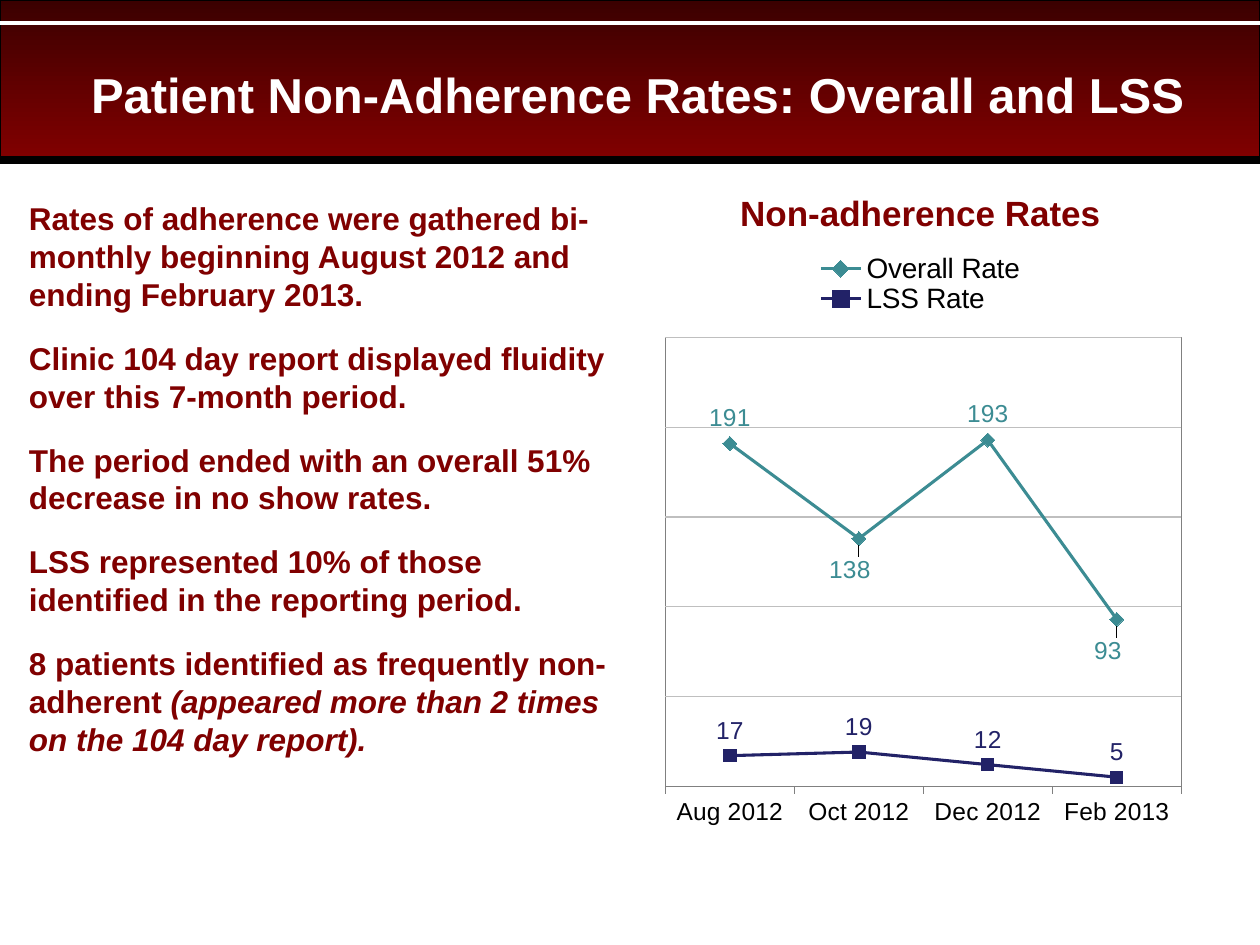
from lxml import etree
from pptx import Presentation
from pptx import util as u
from pptx.chart.data import CategoryChartData
from pptx.dml.color import RGBColor
from pptx.enum import chart as ch, shapes, text
from pptx.oxml import parse_xml
from pptx.oxml.ns import nsdecls, qn

MAROON, TEAL, NAVY, GRAY = "800000", "3C8C93", "222267", "808080"


def rgb(value):
    return RGBColor.from_string(value)


def style_font(font, size, color="000000", bold=False, italic=False):
    font.name, font.size = "Arial", u.Pt(size)
    font.bold, font.italic = bold, italic
    font.color.rgb = rgb(color)


def style_line(line, color, width):
    line.color.rgb = rgb(color)
    line.width = u.Pt(width)


def place(shape, box):
    shape.left, shape.top, shape.width, shape.height = map(u.Inches, box)


def write(paragraph, content, align=text.PP_ALIGN.LEFT, **font):
    run = paragraph.add_run()
    run.text = content
    paragraph.alignment = align
    style_font(run.font, **font)


def add_banner(slide, box):
    left, top, width, height = box
    band = slide.shapes.add_shape(shapes.MSO_SHAPE.RECTANGLE, *map(u.Inches, box))
    band.shadow.inherit = False
    band.fill.gradient()
    band.fill.gradient_angle = 270
    for stop, color in zip(band.fill.gradient_stops, ("3B0000", MAROON)):
        stop.color.rgb = rgb(color)
    style_line(band.line, "000000", 0.75)
    for offset, color, weight in ((height + 0.02, "000000", 4.5), (0.18, "FFFFFF", 2.25)):
        y = u.Inches(top + offset)
        rule = slide.shapes.add_connector(
            shapes.MSO_CONNECTOR.STRAIGHT, u.Inches(left), y, u.Inches(left + width), y)
        style_line(rule.line, color, weight)
        etree.SubElement(rule._element.spPr, qn("a:effectLst"))


def bring_to_front(shape):
    shape._element.getparent().append(shape._element)


def fill_title(title, box, content):
    place(title, box)
    bring_to_front(title)
    frame = title.text_frame
    frame.auto_size = text.MSO_AUTO_SIZE.NONE
    frame.vertical_anchor = text.MSO_ANCHOR.BOTTOM
    write(frame.paragraphs[0], content, text.PP_ALIGN.CENTER,
          size=28, color="FFFFFF", bold=True)


def fill_findings(body, box, findings):
    """Each finding is a plain part, optionally followed by an italic part."""
    place(body, box)
    bring_to_front(body)
    frame = body.text_frame
    frame.auto_size = text.MSO_AUTO_SIZE.NONE
    for index, parts in enumerate(findings):
        paragraph = frame.add_paragraph() if index else frame.paragraphs[0]
        properties = paragraph._p.get_or_add_pPr()
        properties.set("marL", "0")
        properties.set("indent", "0")
        etree.SubElement(properties, qn("a:buNone"))
        paragraph.line_spacing = 1.0
        paragraph.space_before = u.Pt(15 if index else 0)
        for position, part in enumerate(parts):
            write(paragraph, part, size=18, color=MAROON, bold=True, italic=position > 0)


def set_layout(parent, index, **values):
    """Place a chart part by fractions of the chart's size."""
    for old in parent.findall(qn("c:layout")):
        parent.remove(old)
    layout = etree.Element(qn("c:layout"))
    manual = etree.SubElement(layout, qn("c:manualLayout"))
    for key, value in values.items():
        etree.SubElement(manual, qn(f"c:{key}")).set("val", str(value))
    parent.insert(index, layout)


def hide_leader_lines(labels):
    labels._element.append(parse_xml(
        f'<c:extLst {nsdecls("c")}><c:ext uri="{{CE6537A1-D6FC-4f65-9D91-7224C49458BB}}" '
        'xmlns:c15="http://schemas.microsoft.com/office/drawing/2012/chart">'
        '<c15:showLeaderLines val="0"/></c:ext></c:extLst>'))


def style_series(series, color, marker, marker_size):
    series.smooth = False
    style_line(series.format.line, color, 1.75)
    series.marker.style, series.marker.size = marker, marker_size
    series.marker.format.fill.solid()
    series.marker.format.fill.fore_color.rgb = rgb(color)
    series.marker.format.line.color.rgb = rgb(color)
    labels = series.data_labels
    labels.show_value = True
    labels.position = ch.XL_LABEL_POSITION.ABOVE
    style_font(labels.font, 14, color)


def add_rates_chart(slide, box, months, rates):
    data = CategoryChartData()
    data.categories = months
    for name, values in rates.items():
        data.add_series(name, values)
    chart = slide.shapes.add_chart(
        ch.XL_CHART_TYPE.LINE_MARKERS, *map(u.Inches, box), data).chart
    style_font(chart.font, 10)
    chart.has_title = False

    chart.has_legend = True
    chart.legend.position = ch.XL_LEGEND_POSITION.RIGHT
    chart.legend.include_in_layout = False
    style_font(chart.legend.font, 16)
    set_layout(chart.legend._element, 1, xMode="edge", yMode="edge",
               x=0.32, y=0.04, w=0.36, h=0.1)

    month_axis, rate_axis = chart.category_axis, chart.value_axis
    month_axis.major_tick_mark = ch.XL_TICK_MARK.OUTSIDE
    style_font(month_axis.tick_labels.font, 14)
    style_line(month_axis.format.line, GRAY, 0.75)
    rate_axis.visible = False
    rate_axis.minimum_scale, rate_axis.maximum_scale, rate_axis.major_unit = 0, 250, 50
    rate_axis.has_major_gridlines = True
    style_line(rate_axis.major_gridlines.format.line, "BFBFBF", 0.75)

    plot = chart.plots[0]
    plot.vary_by_categories = False
    overall, lss = plot.series
    style_series(overall, TEAL, ch.XL_MARKER_STYLE.DIAMOND, 8)
    style_series(lss, NAVY, ch.XL_MARKER_STYLE.SQUARE, 7)
    for low_point in (1, 3):
        label = overall.points[low_point].data_label
        style_font(label.font, 14, TEAL)
        label.position = ch.XL_LABEL_POSITION.BELOW
        element = overall.data_labels._element.findall(qn("c:dLbl"))[-1]
        set_layout(element, 1, x=-0.015, y=0.01)
    hide_leader_lines(overall.data_labels)

    area = chart._chartSpace.chart.plotArea
    set_layout(area, 0, layoutTarget="inner", xMode="edge", yMode="edge",
               x=0.074, y=0.179, w=0.862, h=0.74)
    area.append(parse_xml(
        f'<c:spPr {nsdecls("c", "a")}><a:noFill/><a:ln w="9525"><a:solidFill>'
        f'<a:srgbClr val="{GRAY}"/></a:solidFill></a:ln></c:spPr>'))


def add_chart_heading(slide, box, content):
    frame = slide.shapes.add_textbox(*map(u.Inches, box)).text_frame
    frame.word_wrap = True
    write(frame.paragraphs[0], content, text.PP_ALIGN.CENTER,
          size=20, color=MAROON, bold=True)


def main():
    deck = Presentation()
    deck.slide_width, deck.slide_height = u.Inches(10), u.Inches(7.5)
    slide = deck.slides.add_slide(deck.slide_layouts[1])
    add_banner(slide, (0, 0, 10, 1.25))
    fill_title(slide.shapes.title, (0.5, 0.3, 9.12, 0.73),
               "Patient Non-Adherence Rates: Overall and LSS")
    fill_findings(slide.placeholders[1], (0.13, 1.53, 4.95, 5.21), [
        ("Rates of adherence were gathered bi-monthly beginning August 2012 "
         "and ending February 2013.",),
        ("Clinic 104 day report displayed fluidity over this 7-month period.",),
        ("The period ended with an overall 51% decrease in no show rates.",),
        ("LSS represented 10% of those identified in the reporting period.",),
        ("8 patients identified as frequently non-adherent",
         " (appeared more than 2 times on the 104 day report)."),
    ])
    add_rates_chart(slide, (4.93, 1.82, 4.75, 4.81),
                    ["Aug 2012", "Oct 2012", "Dec 2012", "Feb 2013"],
                    {"Overall Rate": (191, 138, 193, 93), "LSS Rate": (17, 19, 12, 5)})
    add_chart_heading(slide, (5.59, 1.47, 3.43, 0.44), "Non-adherence Rates")
    deck.save("out.pptx")


if __name__ == "__main__":
    main()
